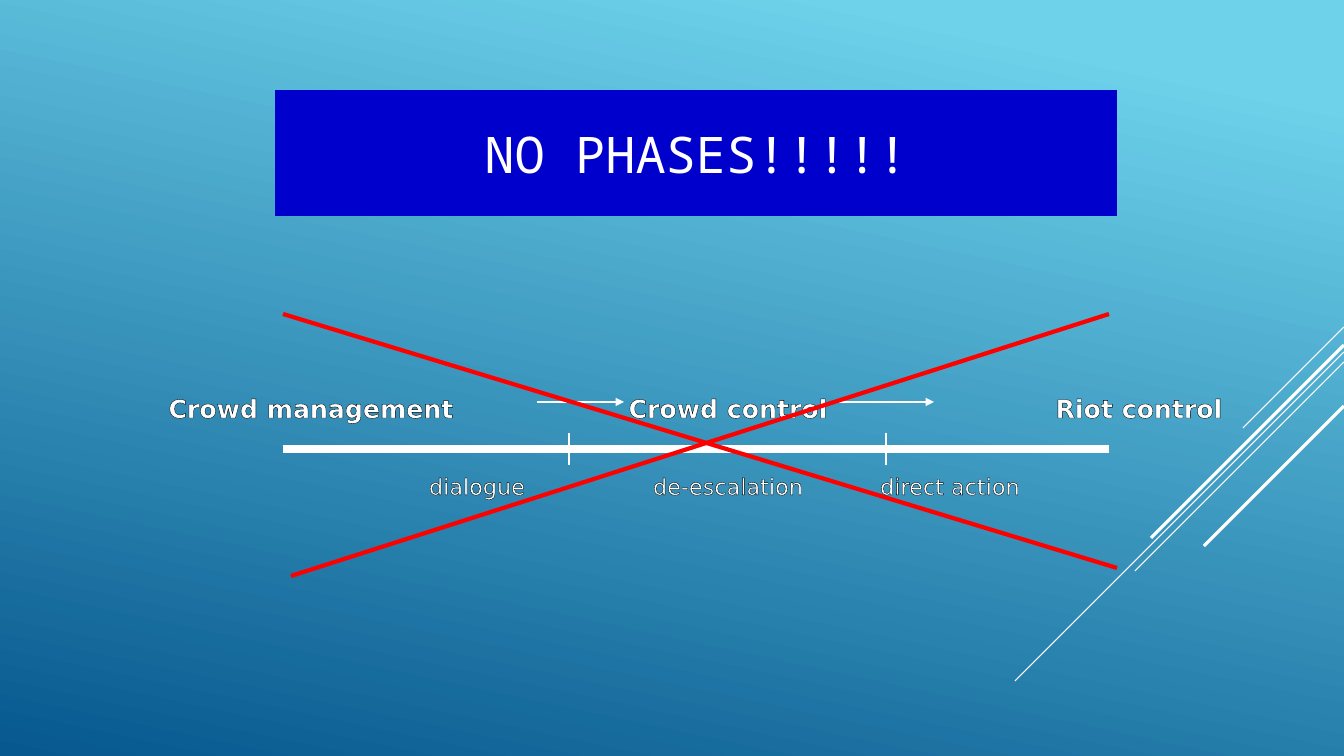
from dataclasses import dataclass

from lxml import etree
from pptx import Presentation
from pptx.dml.color import RGBColor
from pptx.enum.shapes import MSO_CONNECTOR
from pptx.enum.text import MSO_ANCHOR, MSO_AUTO_SIZE, PP_ALIGN
from pptx.oxml import parse_xml
from pptx.oxml.ns import nsdecls, qn
from pptx.slide import Slide
from pptx.text.text import TextFrame
from pptx.util import Pt

STRAIGHT = MSO_CONNECTOR.STRAIGHT
MIDDLE = MSO_ANCHOR.MIDDLE
NO_FIT = MSO_AUTO_SIZE.NONE
CENTER = PP_ALIGN.CENTER

EMU_PER_PX = 914400 / 100.8
WIDTH, HEIGHT = 1344, 756
WHITE, RED, BLUE, BLACK = "FFFFFF", "FF0000", "0000CC", "000000"
LABEL_W, LABEL_H = 300, 30


@dataclass
class Line:
    x1: int
    y1: int
    x2: int
    y2: int
    weight: float
    color: str = WHITE
    arrow: bool = False


@dataclass
class Label:
    text: str
    cx: int
    cy: int
    size: int
    bold: bool = False


DIAGONALS = [
    Line(WIDTH, y, WIDTH - run, y + run, weight)
    for y, run, weight in [
        (327, 101, 0.75),
        (352, 329, 0.75),
        (362, 209, 0.75),
        (345, 193, 2.25),
        (406, 140, 2.25),
    ]
]
SCALE = [Line(283, 449, 1109, 449, 6)] + [
    Line(x, 433, x, 465, 1) for x in (569, 886)
]
ARROWS = [
    Line(x1, 402, x2, 402, 1, arrow=True) for x1, x2 in [(537, 624), (839, 934)]
]
CROSS = [
    Line(291, 576, 1109, 314, 3, RED),
    Line(283, 314, 1117, 568, 3, RED),
]
PHASES = [
    Label(text, cx, 408, 18, True)
    for text, cx in [
        ("Crowd management", 311),
        ("Crowd control", 728),
        ("Riot control", 1139),
    ]
]
TACTICS = [
    Label(text, cx, 486, 16)
    for text, cx in [
        ("dialogue", 477),
        ("de-escalation", 728),
        ("direct action", 950),
    ]
]


def px(n: float) -> int:
    return round(n * EMU_PER_PX)


def rgb(color: str) -> RGBColor:
    return RGBColor.from_string(color)


def set_text(tf: TextFrame, text: str, font: str, size: int, bold: bool) -> None:
    tf.auto_size = NO_FIT
    tf.word_wrap = True
    tf.vertical_anchor = MIDDLE
    tf.margin_left = tf.margin_right = tf.margin_top = tf.margin_bottom = 0
    p = tf.paragraphs[0]
    p.text = text
    p.alignment = CENTER
    p.font.name = font
    p.font.size = Pt(size)
    p.font.bold = bold
    p.font.color.rgb = rgb(WHITE)


def draw_line(s: Slide, line: Line) -> None:
    ends = [px(n) for n in (line.x1, line.y1, line.x2, line.y2)]
    c = s.shapes.add_connector(STRAIGHT, *ends)
    c.line.color.rgb = rgb(line.color)
    c.line.width = Pt(line.weight)
    sp_pr = c._element.spPr
    if line.arrow:
        etree.SubElement(sp_pr.find(qn("a:ln")), qn("a:tailEnd"), type="triangle")
    etree.SubElement(sp_pr, qn("a:effectLst"))


def draw_label(s: Slide, label: Label) -> None:
    box = s.shapes.add_textbox(
        px(label.cx - LABEL_W / 2), px(label.cy - LABEL_H / 2),
        px(LABEL_W), px(LABEL_H),
    )
    set_text(box.text_frame, label.text, "DejaVu Sans", label.size, label.bold)
    r = box.text_frame.paragraphs[0].runs[0]
    outline = parse_xml(
        f'<a:ln {nsdecls("a")} w="{Pt(0.75)}"><a:solidFill>'
        f'<a:srgbClr val="{BLACK}"/></a:solidFill></a:ln>'
    )
    r._r.get_or_add_rPr().insert(0, outline)


def draw_background(s: Slide) -> None:
    fill = s.background.fill
    fill.gradient()
    fill.gradient_angle = 258
    stops = [(0.1, "6ED2EB"), (1, "06588E")]
    for stop, (position, color) in zip(fill.gradient_stops, stops):
        stop.position = position
        stop.color.rgb = rgb(color)


def draw_title(s: Slide) -> None:
    title = s.shapes.title
    title.left, title.top = px(275), px(90)
    title.width, title.height = px(842), px(126)
    title.fill.solid()
    title.fill.fore_color.rgb = rgb(BLUE)
    set_text(title.text_frame, "NO PHASES!!!!!", "Noto Sans Mono", 36, False)


def main() -> None:
    prs = Presentation()
    prs.slide_width, prs.slide_height = px(WIDTH), px(HEIGHT)
    s = prs.slides.add_slide(prs.slide_layouts[5])
    draw_background(s)
    draw_title(s)
    for line in DIAGONALS + SCALE:
        draw_line(s, line)
    for label in PHASES:
        draw_label(s, label)
    for line in ARROWS + CROSS:
        draw_line(s, line)
    for label in TACTICS:
        draw_label(s, label)
    prs.save("out.pptx")


if __name__ == "__main__":
    main()
